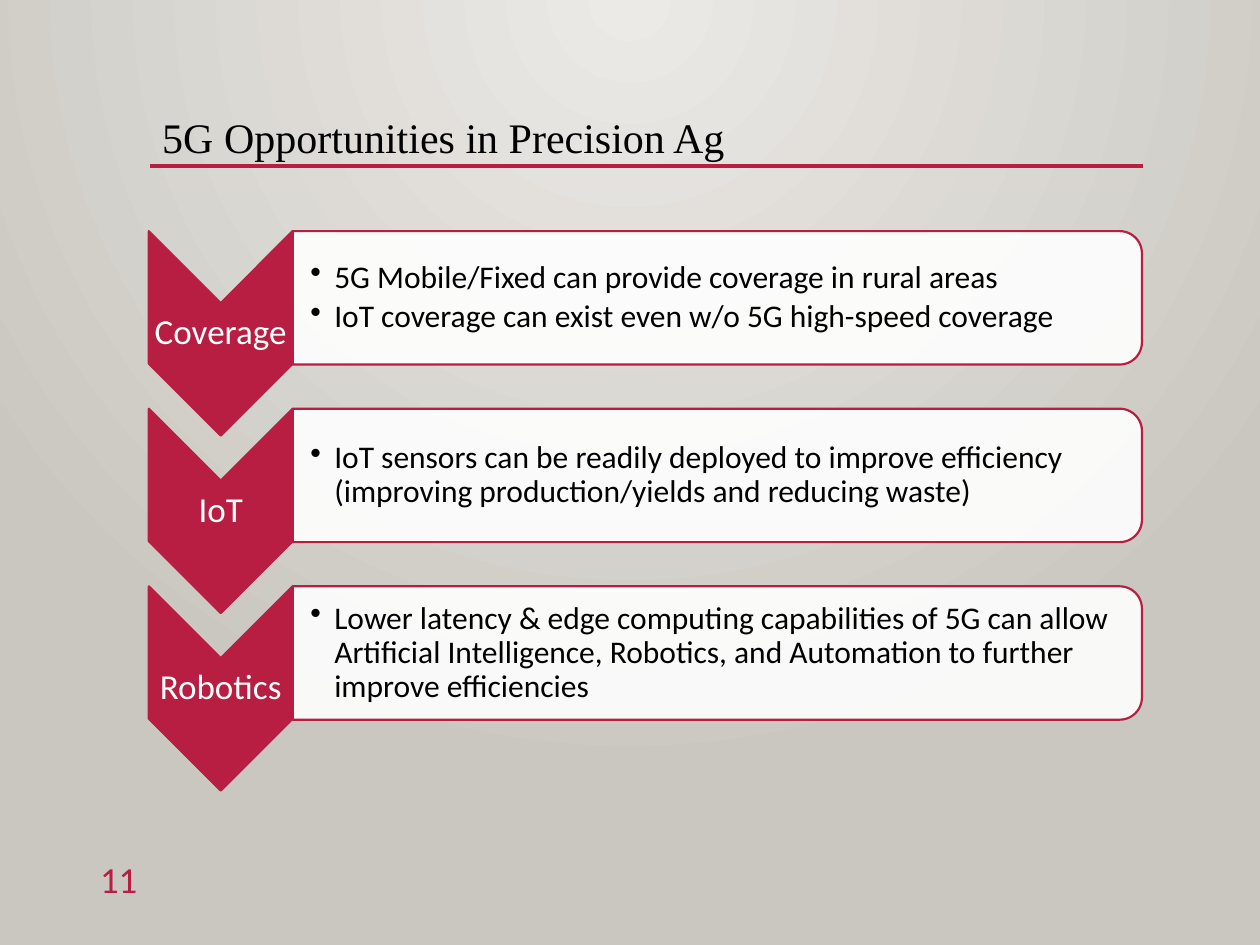
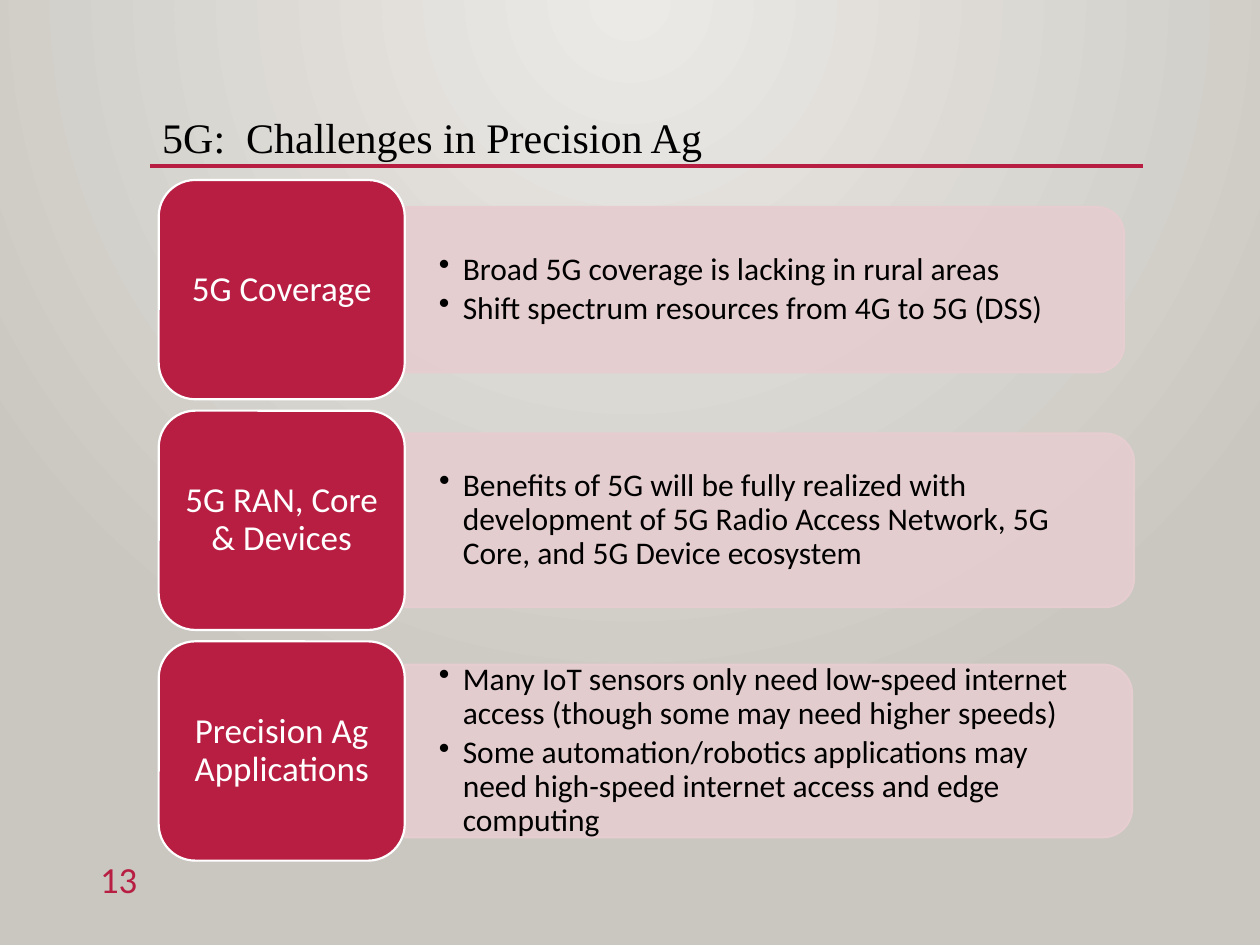
import pptx
import pptx.dml.color
import pptx.enum.shapes
import pptx.enum.text
import pptx.oxml
import pptx.oxml.ns
import pptx.util
from lxml import etree

Cm, Pt = pptx.util.Cm, pptx.util.Pt
SHAPE = pptx.enum.shapes.MSO_SHAPE
ALIGN = pptx.enum.text.PP_ALIGN
ANCHOR = pptx.enum.text.MSO_ANCHOR
qn = pptx.oxml.ns.qn

OPPORTUNITIES = {
    "title": "5G Opportunities in Precision Ag",
    "number": "11",
    "rows": [
        ("Coverage", ["5G Mobile/Fixed can provide coverage in rural areas",
                      "IoT coverage can exist even w/o 5G high-speed coverage"]),
        ("IoT", ["IoT sensors can be readily deployed to improve efficiency "
                 "(improving production/yields and reducing waste)"]),
        ("Robotics", ["Lower latency & edge computing capabilities of 5G can allow "
                      "Artificial Intelligence, Robotics, and Automation to further "
                      "improve efficiencies"]),
    ],
}
# Each row: card label, bullets, panel width and height in cm
CHALLENGES = {
    "title": "5G:  Challenges in Precision Ag",
    "number": "13",
    "rows": [
        ("5G Coverage", ["Broad 5G coverage is lacking in rural areas",
                         "Shift spectrum resources from 4G to 5G (DSS)"], 14.5, 3.33),
        ("5G RAN, Core & Devices",
         ["Benefits of 5G will be fully realized with development of "
          "5G Radio Access Network, 5G Core, and 5G Device ecosystem"], 14.7, 3.5),
        ("Precision Ag Applications",
         ["Many IoT sensors only need low-speed internet access "
          "(though some may need higher speeds)",
          "Some automation/robotics applications may need high-speed "
          "internet access and edge computing"], 14.66, 3.48),
    ],
}

CRIMSON, WHITE, BLACK, PINK = "B71E42", "FFFFFF", "000000", "E6CDCF"
BG_CENTRE, BG_EDGE = "ECEAE7", "CAC7C1"
BODY_FONT, TITLE_FONT = "Calibri", "Times New Roman"
RULE_LEFT, RULE_RIGHT, RULE_Y = 3.02, 23.04, 3.35
CORNER_INSET = 0.05  # share of a panel's height kept clear of its rounded corners


def rgb(colour):
    return pptx.dml.color.RGBColor.from_string(colour)


def set_alpha(fill_parent, percent):
    for clr in fill_parent.iter(qn("a:srgbClr")):
        etree.SubElement(clr, qn("a:alpha"), val=str(percent * 1000))


def paint_background(master):
    """Radial gradient spreading from the middle of the top edge."""
    fill = master.background.fill
    fill.gradient()
    for stop, colour in zip(fill.gradient_stops, (BG_CENTRE, BG_EDGE)):
        stop.color.rgb = rgb(colour)
    fill.gradient_stops[0].position, fill.gradient_stops[1].position = 0, 1
    lin = next(master.element.iter(qn("a:lin")))
    radial = etree.Element(qn("a:path"), {"path": "circle"})
    etree.SubElement(radial, qn("a:fillToRect"), l="43000", t="0", r="43000", b="100000")
    lin.getparent().replace(lin, radial)


def style_text(p, size, colour, font=BODY_FONT, align=ALIGN.LEFT, after=0):
    p.alignment = align
    p.line_spacing = 0.9
    p.space_before, p.space_after = Pt(0), Pt(after)
    for r in p.runs:
        r.font.name, r.font.size = font, Pt(size)
        r.font.color.rgb = rgb(colour)


def set_frame(tf, anchor, insets):
    """Insets are left, top, right, bottom in cm."""
    tf.word_wrap = True
    tf.auto_size = pptx.enum.text.MSO_AUTO_SIZE.NONE
    tf.vertical_anchor = anchor
    tf.margin_left, tf.margin_top, tf.margin_right, tf.margin_bottom = map(Cm, insets)


def add_shape(slide, kind, x, y, w, h, fill, line, turned=False, alpha=None):
    """Place a shape by its visible box; a turned one is rotated 90 degrees."""
    if turned:
        x, y, w, h = x + (w - h) / 2, y + (h - w) / 2, h, w
    sp = slide.shapes.add_shape(kind, Cm(x), Cm(y), Cm(w), Cm(h))
    sp.rotation = 90 if turned else 0
    sp.shadow.inherit = False
    sp.fill.solid()
    sp.fill.fore_color.rgb = rgb(fill)
    if alpha:
        set_alpha(sp._element.spPr, alpha)
    sp.line.color.rgb = rgb(line)
    sp.line.width = Pt(1.25)
    return sp


def add_textbox(slide, x, y, w, h):
    return slide.shapes.add_textbox(Cm(x), Cm(y), Cm(w), Cm(h)).text_frame


def write_label(tf, text, insets):
    set_frame(tf, ANCHOR.MIDDLE, insets)
    tf.text = text
    style_text(tf.paragraphs[0], 20, WHITE, align=ALIGN.CENTER)


def add_panel(slide, x, y, w, h, bullets, insets, fill, line):
    """Translucent bar rounded on the right, with a bulleted list on it."""
    add_shape(slide, SHAPE.ROUND_2_SAME_RECTANGLE, x, y, w, h, fill, line, True, 90)
    gap = h * CORNER_INSET
    tf = add_textbox(slide, x, y + gap, w - gap, h - 2 * gap)
    set_frame(tf, ANCHOR.MIDDLE, insets)
    tf.text = "\n".join(bullets)
    for p in tf.paragraphs:
        pPr = p._p.get_or_add_pPr()
        pPr.set("marL", str(Cm(0.48)))
        pPr.set("indent", str(-Cm(0.48)))
        etree.SubElement(pPr, qn("a:buChar"), char="•")
        style_text(p, 18, BLACK, after=3)


def add_slide(prs, content):
    slide = prs.slides.add_slide(prs.slide_layouts[5])
    rule = slide.shapes.add_connector(pptx.enum.shapes.MSO_CONNECTOR.STRAIGHT,
                                      Cm(RULE_LEFT), Cm(RULE_Y), Cm(RULE_RIGHT), Cm(RULE_Y))
    rule.line.color.rgb = rgb(CRIMSON)
    rule.line.width = Pt(2.5)
    etree.SubElement(rule._element.spPr, qn("a:effectLst"))

    title = slide.shapes.title
    title.left, title.top = Cm(RULE_LEFT), Cm(2.11)
    title.width, title.height = Cm(RULE_RIGHT - RULE_LEFT), Cm(1.3)
    set_frame(title.text_frame, ANCHOR.BOTTOM, (0.25, 0.13, 0.25, 0.13))
    title.text_frame.text = content["title"]
    style_text(title.text_frame.paragraphs[0], 24, BLACK, TITLE_FONT)

    tf = add_textbox(slide, 1.32, 17.15, 1.7, 1.4)
    set_frame(tf, ANCHOR.TOP, (0.25, 0.13, 0.25, 0.13))
    tf.text = content["number"]
    style_text(tf.paragraphs[0], 21, CRIMSON, align=ALIGN.RIGHT)
    tf.paragraphs[0].line_spacing = 1.0
    return slide


def build_opportunities(prs):
    slide = add_slide(prs, OPPORTUNITIES)
    left, top, pitch = 3.0, 4.66, 3.58
    chevron_w, chevron_h, label_h = 2.9, 4.12, 1.24
    for i, (label, bullets) in enumerate(OPPORTUNITIES["rows"]):
        y = top + i * pitch
        add_shape(slide, SHAPE.CHEVRON, left, y, chevron_w, chevron_h,
                  CRIMSON, CRIMSON, turned=True)
        tf = add_textbox(slide, left, y + (chevron_h - label_h) / 2, chevron_w, label_h)
        write_label(tf, label, (0.03,) * 4)
        add_panel(slide, left + chevron_w, y, 17.12, 2.69, bullets,
                  (0.36, 0.03, 0.03, 0.03), WHITE, CRIMSON)


def build_challenges(prs):
    slide = add_slide(prs, CHALLENGES)
    left, top, pitch = 3.2, 3.63, 4.65
    card_w, card_h = 4.96, 4.42
    for i, (label, bullets, panel_w, panel_h) in enumerate(CHALLENGES["rows"]):
        y = top + i * pitch
        add_panel(slide, left + card_w, y + (card_h - panel_h) / 2, panel_w, panel_h,
                  bullets, (0.69, 0.36, 0.69, 0.36), PINK, PINK)
        card = add_shape(slide, SHAPE.ROUNDED_RECTANGLE, left, y, card_w, card_h,
                         CRIMSON, WHITE)
        write_label(card.text_frame, label, (0.2, 0.1, 0.2, 0.1))


def main():
    prs = pptx.Presentation()
    prs.slide_width, prs.slide_height = Cm(25.4), Cm(19.05)
    paint_background(prs.slide_master)
    build_opportunities(prs)
    build_challenges(prs)
    prs.save("out.pptx")


if __name__ == "__main__":
    main()
